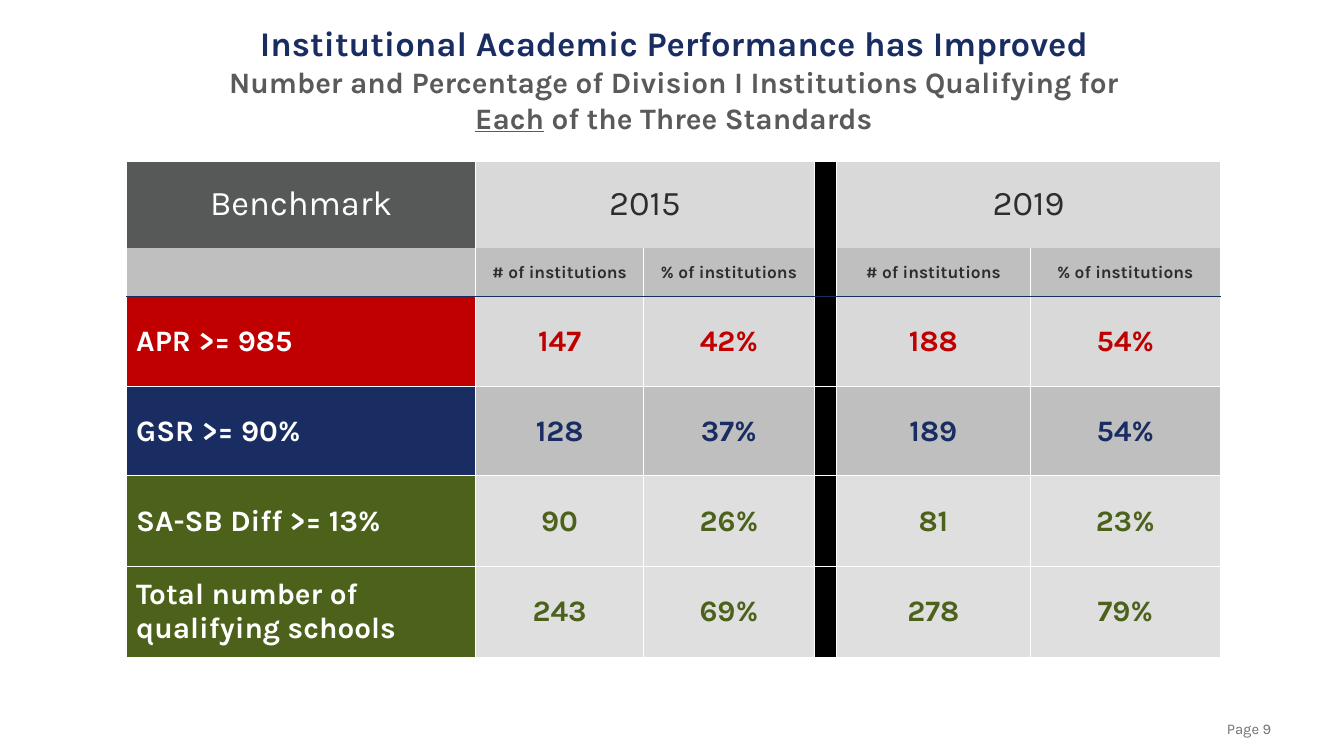
from dataclasses import dataclass

from lxml import etree
from pptx import Presentation
from pptx import util as u
from pptx.dml.color import RGBColor
from pptx.enum import text
from pptx.oxml import ns


@dataclass(frozen=True)
class Theme:
    font: str = "Karla"
    navy: str = "1A2D63"
    red: str = "C00000"
    green: str = "4C621B"
    white: str = "FFFFFF"
    black: str = "000000"
    ink: str = "2D2D2D"
    subtitle: str = "5A5A5A"
    page: str = "717073"
    charcoal: str = "575858"
    light: str = "D9D9D9"
    medium: str = "BFBFBF"
    pale: str = "DFDFDF"
    heading_size: int = 28
    body_size: int = 24
    label_size: int = 14
    page_size: int = 12


theme = Theme()
CENTER, LEFT = text.PP_ALIGN.CENTER, text.PP_ALIGN.LEFT


def add_run(paragraph, words, size, color, bold=False, underline=False):
    run = paragraph.add_run()
    run.text = words
    font = run.font
    font.name, font.size, font.bold = theme.font, u.Pt(size), bold
    font.underline = underline
    font.color.rgb = RGBColor.from_string(color)


def set_borders(cell, colors):
    """Colors run left, right, top, bottom; None leaves a side without a line."""
    properties = cell._tc.get_or_add_tcPr()
    for index, (side, color) in enumerate(zip("LRTB", colors)):
        line = etree.Element(ns.qn(f"a:ln{side}"), w=str(u.Pt(1)))
        if color:
            fill = etree.SubElement(line, ns.qn("a:solidFill"))
            etree.SubElement(fill, ns.qn("a:srgbClr"), val=color)
        else:
            etree.SubElement(line, ns.qn("a:noFill"))
        properties.insert(index, line)


presentation = Presentation()
presentation.slide_width, presentation.slide_height = u.Cm(38.38), u.Cm(21.59)
slide = presentation.slides.add_slide(presentation.slide_layouts[5])

# Title and subtitle
title = slide.shapes.title
title.left, title.top, title.width, title.height = u.Cm(5.51), u.Cm(0.58), u.Cm(27.46), u.Cm(3.33)
frame = title.text_frame
frame.word_wrap = True
frame.auto_size = text.MSO_AUTO_SIZE.NONE
frame.vertical_anchor = text.MSO_ANCHOR.MIDDLE
heading = frame.paragraphs[0]
heading.alignment = CENTER
add_run(heading, "Institutional Academic Performance has Improved", theme.heading_size, theme.navy, True)
subtitle = frame.add_paragraph()
subtitle.alignment = CENTER
for words, underline in [
    ("Number and Percentage of Division I Institutions Qualifying for ", False),
    ("Each", True),
    (" of the Three Standards", False),
]:
    add_run(subtitle, words, theme.body_size, theme.subtitle, True, underline)

# Benchmark table: words, label fill, value fill, value color, size, bold
count, share = "# of institutions", "% of institutions"
rows = [
    (["Benchmark", "2015", "", "", "2019", ""],
     theme.charcoal, theme.light, theme.ink, theme.heading_size, False),
    (["", count, share, "", count, share],
     theme.medium, theme.medium, theme.ink, theme.label_size, True),
    (["APR >= 985", "147", "42%", "", "188", "54%"],
     theme.red, theme.light, theme.red, theme.body_size, True),
    (["GSR >= 90%", "128", "37%", "", "189", "54%"],
     theme.navy, theme.medium, theme.navy, theme.body_size, True),
    (["SA-SB Diff >= 13%", "90", "26%", "", "81", "23%"],
     theme.green, theme.pale, theme.green, theme.body_size, True),
    (["Total number of qualifying schools", "243", "69%", "", "278", "79%"],
     theme.green, theme.pale, theme.green, theme.body_size, True),
]
column_widths = [9.97, 4.8, 4.87, 0.64, 5.53, 5.43]
row_heights = [2.48, 1.39, 2.57, 2.55, 2.59, 2.59]
DIVIDER = 3
table = slide.shapes.add_table(
    len(rows), len(column_widths), u.Cm(3.61), u.Cm(4.6),
    u.Cm(sum(column_widths)), u.Cm(sum(row_heights))).table
table.first_row = table.horz_banding = False
for column, width in zip(table.columns, column_widths):
    column.width = u.Cm(width)
for row, height in zip(table.rows, row_heights):
    row.height = u.Cm(height)

# Top and bottom lines of the two header rows and the first data row
horizontal_lines = {0: (theme.white, None), 1: (None, theme.navy), 2: (theme.navy, theme.white)}

for r, (words, label_fill, value_fill, value_color, size, bold) in enumerate(rows):
    for c, word in enumerate(words):
        cell = table.cell(r, c)
        fill = theme.black if c == DIVIDER else value_fill if c else label_fill
        cell.fill.solid()
        cell.fill.fore_color.rgb = RGBColor.from_string(fill)
        cell.vertical_anchor = text.MSO_ANCHOR.MIDDLE
        cell.margin_left = cell.margin_right = u.Cm(0 if c == DIVIDER else 0.28)
        cell.margin_top = cell.margin_bottom = u.Cm(0.15)
        lines = horizontal_lines.get(r, (theme.white, theme.white))
        set_borders(cell, (theme.white, theme.white, *lines))
        if word:
            paragraph = cell.text_frame.paragraphs[0]
            paragraph.alignment = LEFT if c == 0 and r > 1 else CENTER
            add_run(paragraph, word, size, value_color if c else theme.white, bold)

# Year headings span their two columns
for c in (1, 4):
    table.cell(0, c).merge(table.cell(0, c + 1))

# Page number
page = slide.shapes.add_textbox(u.Cm(33.93), u.Cm(20.42), u.Cm(3.48), u.Cm(0.74))
page.text_frame.word_wrap = True
paragraph = page.text_frame.paragraphs[0]
paragraph.alignment = CENTER
add_run(paragraph, "Page 9", theme.page_size, theme.page)

presentation.save("out.pptx")
